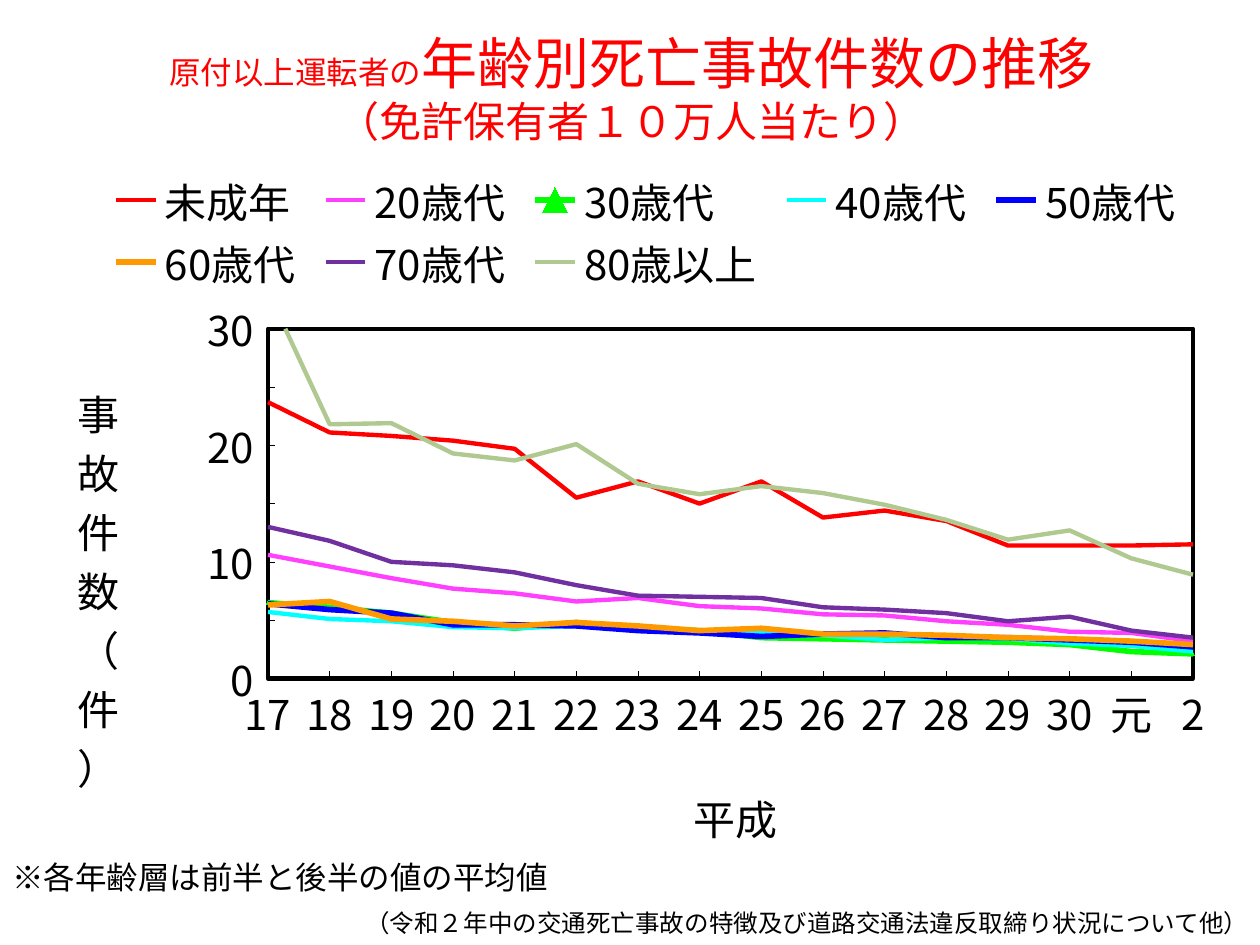
from lxml import etree
from pptx import Presentation
from pptx.chart.data import CategoryChartData
from pptx.dml.color import RGBColor
from pptx.enum.chart import XL_CHART_TYPE as CT, XL_LEGEND_POSITION as LP
from pptx.enum.chart import XL_MARKER_STYLE as MS, XL_TICK_MARK as TM
from pptx.enum.text import MSO_ANCHOR, PP_ALIGN
from pptx.oxml.ns import qn
from pptx.util import Pt

PX = 914400 / 126
FONT = "Noto Sans CJK JP"
BLACK = RGBColor(0, 0, 0)
RED = RGBColor(255, 0, 0)
PINK = RGBColor(255, 64, 255)
GREEN = RGBColor(0, 255, 0)
CYAN = RGBColor(0, 255, 255)
BLUE = RGBColor(0, 0, 255)
ORANGE = RGBColor(255, 153, 0)
PURPLE = RGBColor(112, 48, 160)
OLIVE = RGBColor(176, 201, 144)
CHART_X, CHART_Y, CHART_W, CHART_H = 37, 155, 1189, 704


def style(font, size, color=BLACK):
    font.size, font.bold, font.name = Pt(size), False, FONT
    font.color.rgb = color
    etree.SubElement(font._rPr, qn("a:ea"), typeface=FONT)


def place(parent, x, y, w=None, h=None, inner=False):
    layout = parent.find(qn("c:layout"))
    if layout is None:
        layout = etree.Element(qn("c:layout"))
        overlay = parent.find(qn("c:overlay"))
        parent.insert(0 if overlay is None else parent.index(overlay), layout)
    manual = etree.SubElement(layout, qn("c:manualLayout"))
    values = [("layoutTarget", "inner")] if inner else []
    values += [("xMode", "edge"), ("yMode", "edge"),
               ("x", round((x - CHART_X) / CHART_W, 4)),
               ("y", round((y - CHART_Y) / CHART_H, 4))]
    if w:
        values += [("w", round(w / CHART_W, 4)), ("h", round(h / CHART_H, 4))]
    for tag, value in values:
        etree.SubElement(manual, qn("c:" + tag), val=str(value))


prs = Presentation()
prs.slide_width, prs.slide_height = int(1260 * PX), int(945 * PX)
slide = prs.slides.add_slide(prs.slide_layouts[6])

texts = [
    ((37, 9, 1189, 157), True, [[("原付以上運転者の", 18), ("年齢別死亡事故件数の推移", 32)],
                                [("（免許保有者１０万人当たり）", 24)]], RED),
    ((0, 852, 566, 50), False, [[("※各年齢層は前半と後半の値の平均値", 18)]], BLACK),
    ((353, 902, 941, 43), False,
     [[("（令和２年中の交通死亡事故の特徴及び道路交通法違反取締り状況について他）", 14)]], BLACK),
]
for box, is_title, lines, color in texts:
    sp = slide.shapes.add_textbox(*[int(v * PX) for v in box])
    tf = sp.text_frame
    tf.word_wrap = is_title
    p = tf.paragraphs[0]
    if is_title:
        tf.vertical_anchor = MSO_ANCHOR.MIDDLE
        p.alignment = PP_ALIGN.CENTER
    for i, line in enumerate(lines):
        if i:
            p.add_line_break()
        for text, size in line:
            r = p.add_run()
            r.text = text
            style(r.font, size, color)

series = [
    ("未成年", RED, 2.5, [23.7, 21.1, 20.8, 20.4, 19.7, 15.5, 16.9, 15, 16.9, 13.8, 14.4, 13.5, 11.4, 11.4, 11.4, 11.5]),
    ("20歳代", PINK, 2.5, [10.6, 9.6, 8.6, 7.7, 7.3, 6.6, 6.9, 6.2, 6, 5.5, 5.4, 4.9, 4.6, 4, 3.9, 3.2]),
    ("30歳代", GREEN, 3.2, [6.5, 6.1, 5.6, 4.8, 4.3, 4.8, 4.2, 4.1, 3.5, 3.4, 3.3, 3.2, 3.1, 2.9, 2.3, 2.1]),
    ("40歳代", CYAN, 2.5, [5.7, 5.1, 4.9, 4.4, 4.3, 4.5, 4.2, 3.9, 3.9, 3.7, 3.3, 3.5, 3.4, 3, 2.8, 2.3]),
    ("50歳代", BLUE, 3.2, [6.4, 5.9, 5.6, 4.6, 4.6, 4.5, 4.1, 3.9, 3.6, 3.8, 3.9, 3.5, 3.5, 3.3, 3.1, 2.7]),
    ("60歳代", ORANGE, 3.2, [6.3, 6.6, 5.1, 4.9, 4.5, 4.8, 4.5, 4.1, 4.3, 3.8, 3.8, 3.7, 3.5, 3.4, 3.2, 2.9]),
    ("70歳代", PURPLE, 2.5, [13, 11.8, 10, 9.7, 9.1, 8, 7.1, 7, 6.9, 6.1, 5.9, 5.6, 4.9, 5.3, 4.1, 3.5]),
    ("80歳以上", OLIVE, 2.5, [33.2, 21.8, 21.9, 19.3, 18.7, 20.1, 16.7, 15.8, 16.5, 15.9, 14.9, 13.6, 11.9, 12.7, 10.3, 8.9]),
]
data = CategoryChartData()
data.categories = [str(year) for year in range(17, 31)] + ["元", "2"]
for name, color, width, values in series:
    data.add_series(name, values)
frame = [int(v * PX) for v in (CHART_X, CHART_Y, CHART_W, CHART_H)]
chart = slide.shapes.add_chart(CT.LINE_MARKERS, *frame, data).chart
style(chart.font, 24)
chart.has_title = False
chart.plots[0].vary_by_categories = False

for s, (name, color, width, values) in zip(chart.plots[0].series, series):
    s.smooth = False
    s.format.line.color.rgb = color
    s.format.line.width = Pt(width)
    s.marker.style = MS.NONE
    if color == GREEN:
        s.marker.style, s.marker.size = MS.TRIANGLE, 2
        s.marker.format.fill.solid()
        s.marker.format.fill.fore_color.rgb = color
        s.marker.format.line.color.rgb = color

chart.has_legend = True
chart.legend.position = LP.TOP
chart.legend.include_in_layout = False
style(chart.legend.font, 24)
place(chart.legend._element, 100, 168, 1092, 130)

cat, val = chart.category_axis, chart.value_axis
for axis, title, x, y in ((cat, "平成", 686, 790), (val, "事故件数（件）", 70, 376)):
    axis.has_major_gridlines = False
    axis.major_tick_mark, axis.minor_tick_mark = TM.INSIDE, TM.NONE
    axis.format.line.color.rgb = BLACK
    axis.format.line.width = Pt(0.27)
    style(axis.tick_labels.font, 24)
    tf = axis.axis_title.text_frame
    r = tf.paragraphs[0].add_run()
    r.text = title
    style(r.font, 24)
    place(axis.axis_title._element, x, y)
body = val.axis_title.text_frame._txBody.find(qn("a:bodyPr"))
body.set("rot", "0")
body.set("vert", "wordArtVertRtl")
val.minimum_scale, val.maximum_scale, val.major_unit = 0, 30, 5
val.tick_labels.number_format = "#,##0_ "
val.tick_labels.number_format_is_linked = False
between = etree.Element(qn("c:crossBetween"), val="midCat")
val._element.find(qn("c:crosses")).addnext(between)

plot_area = chart._chartSpace.chart.plotArea
place(plot_area, 268, 333, 925, 358, inner=True)
border = etree.SubElement(plot_area, qn("c:spPr"))
etree.SubElement(border, qn("a:noFill"))
ln = etree.SubElement(border, qn("a:ln"), w=str(int(Pt(2.5))))
fill = etree.SubElement(ln, qn("a:solidFill"))
etree.SubElement(fill, qn("a:srgbClr"), val=str(BLACK))

prs.save("out.pptx")
